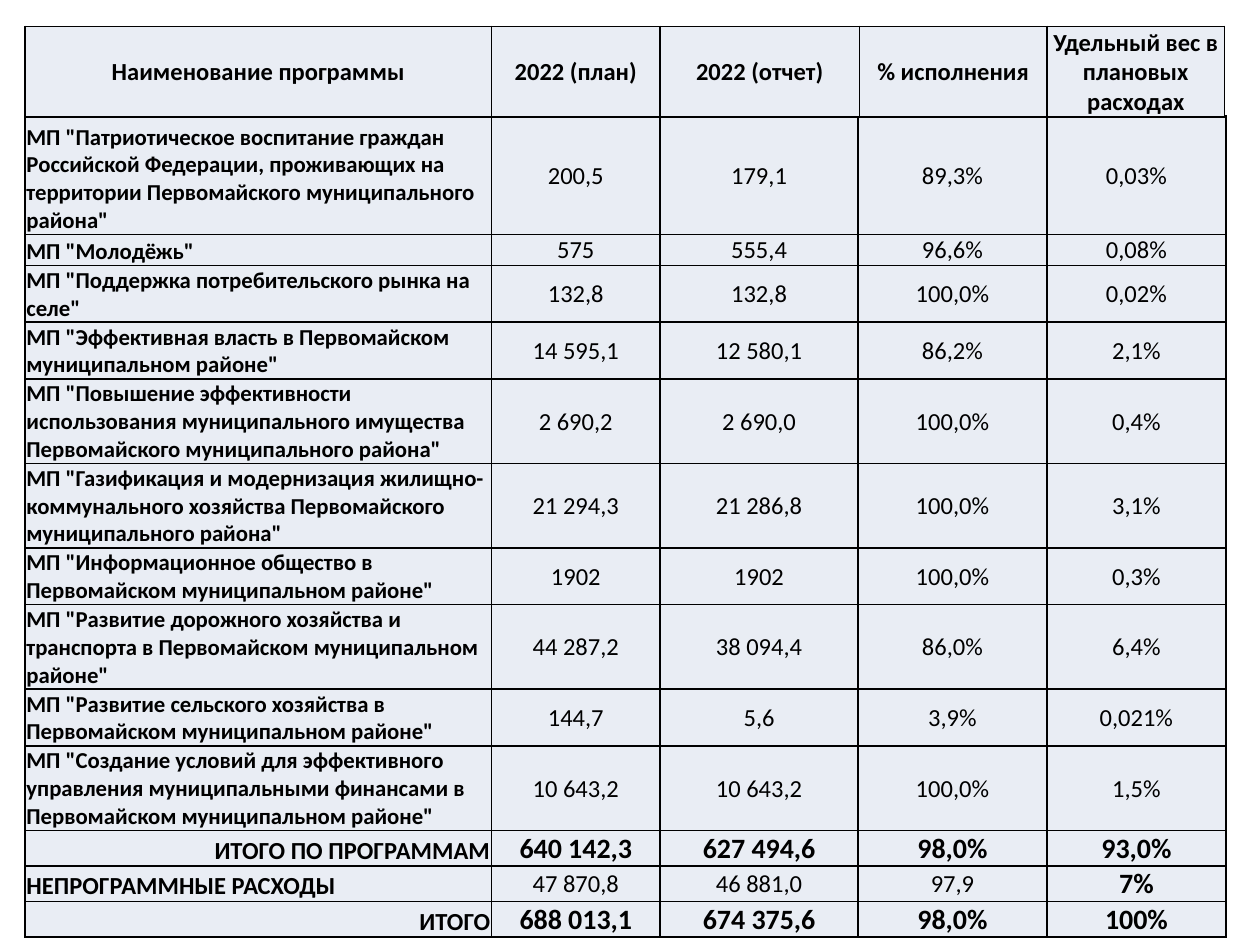
from dataclasses import dataclass

from lxml.etree import SubElement
from pptx import Presentation
from pptx.dml.color import RGBColor
from pptx.enum.text import MSO_ANCHOR as Anchor, PP_ALIGN as Align
from pptx.oxml.ns import qn
from pptx.util import Inches, Pt

BLACK = RGBColor(0x00, 0x00, 0x00)
PALE_BLUE = RGBColor(0xE9, 0xED, 0xF4)
FONT = "Calibri"
LEFT, WIDTH = 0.2, 9.53


@dataclass(frozen=True)
class Style:
    size: int
    bold: bool
    align: Align
    anchor: Anchor = Anchor.MIDDLE


HEADING = Style(14, True, Align.CENTER)
TALL_HEADING = Style(14, True, Align.CENTER, Anchor.BOTTOM)
PROGRAM = Style(13, True, Align.LEFT, Anchor.BOTTOM)
OTHER = Style(14, True, Align.LEFT, Anchor.BOTTOM)
TOTAL = Style(14, True, Align.RIGHT, Anchor.BOTTOM)
VALUE = Style(14, False, Align.CENTER)
TOTAL_VALUE = Style(16, True, Align.CENTER)


@dataclass(frozen=True)
class Row:
    height: float
    texts: tuple[str, ...]
    styles: tuple[Style, ...]


def program(height: float, name: str, *values: str) -> Row:
    return Row(height, (f'МП "{name}"', *values), (PROGRAM,) + (VALUE,) * 4)


def total(name: str, *values: str) -> Row:
    return Row(0.22, (name, *values), (TOTAL,) + (TOTAL_VALUE,) * 4)


HEADER = Row(
    0.6,
    ("Наименование программы", "2022 (план)", "2022 (отчет)", "% исполнения",
     "Удельный вес в плановых расходах"),
    (HEADING,) * 4 + (TALL_HEADING,),
)

BUDGET = [
    program(0.94, "Патриотическое воспитание граждан Российской Федерации, "
            "проживающих на территории Первомайского муниципального района",
            "200,5", "179,1", "89,3%", "0,03%"),
    program(0.16, "Молодёжь", "575", "555,4", "96,6%", "0,08%"),
    program(0.43, "Поддержка потребительского рынка на селе",
            "132,8", "132,8", "100,0%", "0,02%"),
    program(0.08, "Эффективная власть в Первомайском муниципальном районе",
            "14 595,1", "12 580,1", "86,2%", "2,1%"),
    program(0.61, "Повышение эффективности использования муниципального "
            "имущества Первомайского муниципального района",
            "2 690,2", "2 690,0", "100,0%", "0,4%"),
    program(0.62, "Газификация и модернизация жилищно-коммунального "
            "хозяйства Первомайского муниципального района",
            "21 294,3", "21 286,8", "100,0%", "3,1%"),
    program(0.43, "Информационное общество в Первомайском муниципальном районе",
            "1902", "1902", "100,0%", "0,3%"),
    program(0.64, "Развитие дорожного хозяйства и транспорта в Первомайском "
            "муниципальном районе", "44 287,2", "38 094,4", "86,0%", "6,4%"),
    program(0.44, "Развитие сельского хозяйства в Первомайском муниципальном "
            "районе", "144,7", "5,6", "3,9%", "0,021%"),
    program(0.64, "Создание условий для эффективного управления муниципальными "
            "финансами в Первомайском муниципальном районе",
            "10 643,2", "10 643,2", "100,0%", "1,5%"),
    total("ИТОГО ПО ПРОГРАММАМ", "640 142,3", "627 494,6", "98,0%", "93,0%"),
    Row(0.22, ("НЕПРОГРАММНЫЕ РАСХОДЫ", "47 870,8", "46 881,0", "97,9", "7%"),
        (OTHER, VALUE, VALUE, VALUE, TOTAL_VALUE)),
    total("ИТОГО", "688 013,1", "674 375,6", "98,0%", "100%"),
]


def add_borders(cell) -> None:
    properties = cell._tc.get_or_add_tcPr()
    for side in ("lnL", "lnR", "lnT", "lnB"):
        line = SubElement(properties, qn(f"a:{side}"), w=str(Pt(1)))
        fill = SubElement(line, qn("a:solidFill"))
        SubElement(fill, qn("a:srgbClr"), val=str(BLACK))


def fill_cell(cell, text: str, style: Style) -> None:
    add_borders(cell)
    cell.fill.solid()
    cell.fill.fore_color.rgb = PALE_BLUE
    cell.margin_left = cell.margin_right = cell.margin_top = Inches(0.01)
    cell.margin_bottom = 0
    cell.vertical_anchor = style.anchor
    cell.text_frame.text = text
    para = cell.text_frame.paragraphs[0]
    para.alignment = style.align
    font = para.runs[0].font
    font.name = FONT
    font.size = Pt(style.size)
    font.bold = style.bold
    font.color.rgb = BLACK


def draw_table(page, top: float, height: float, widths: tuple[float, ...],
               rows: list[Row]) -> None:
    frame = page.shapes.add_table(len(rows), len(widths), Inches(LEFT),
                                  Inches(top), Inches(WIDTH), Inches(height))
    table = frame.table
    table.first_row = table.horz_banding = False
    for column, width in zip(table.columns, widths):
        column.width = Inches(width)
    for line, row in zip(table.rows, rows):
        line.height = Inches(row.height)
        for cell, text, style in zip(line.cells, row.texts, row.styles):
            fill_cell(cell, text, style)
    frame.height = Inches(height)


def main() -> None:
    deck = Presentation()
    deck.slide_width, deck.slide_height = Inches(10), Inches(7.5)
    page = deck.slides.add_slide(deck.slide_layouts[6])
    draw_table(page, 0.92, 6.41, (3.7, 1.34, 1.57, 1.5, 1.42), BUDGET)
    draw_table(page, 0.21, 0.71, (3.7, 1.34, 1.58, 1.49, 1.41), [HEADER])
    deck.save("out.pptx")


if __name__ == "__main__":
    main()
